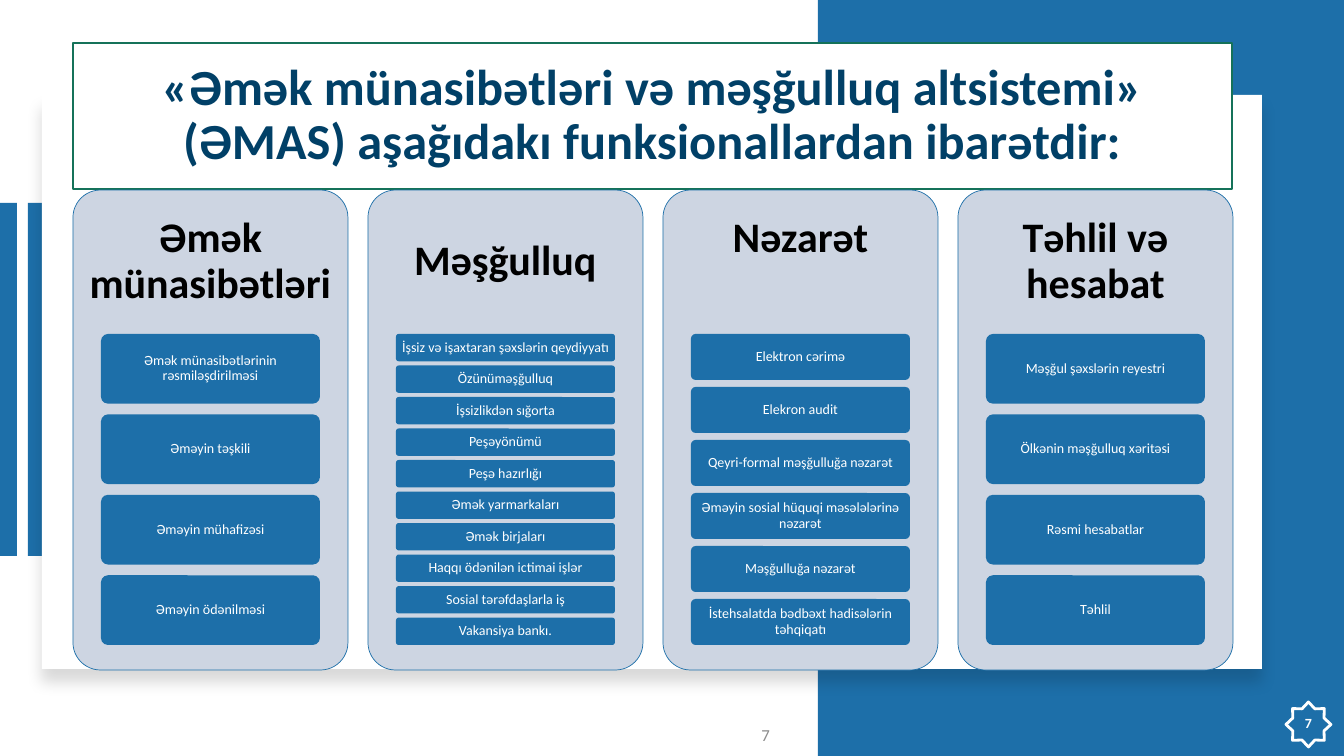
import pptx
import pptx.util
import pptx.dml.color
import pptx.enum.shapes
import pptx.enum.text
import pptx.oxml
import pptx.oxml.ns

TITLE = "«Əmək münasibətləri və məşğulluq altsistemi» (ƏMAS) aşağıdakı funksionallardan ibarətdir:"
PAGE = "7"
# heading, upward shift of the heading in px, functions
COLUMNS = [
    ("Əmək münasibətləri", 0, [
        "Əmək münasibətlərinin rəsmiləşdirilməsi", "Əməyin təşkili",
        "Əməyin mühafizəsi", "Əməyin ödənilməsi"]),
    ("Məşğulluq", 0, [
        "İşsiz və işaxtaran şəxslərin qeydiyyatı", "Özünüməşğulluq",
        "İşsizlikdən sığorta", "Peşəyönümü", "Peşə hazırlığı",
        "Əmək yarmarkaları", "Əmək birjaları", "Haqqı ödənilən ictimai işlər",
        "Sosial tərəfdaşlarla iş", "Vakansiya bankı."]),
    ("Nəzarət", 23, [
        "Elektron cərimə", "Elekron audit", "Qeyri-formal məşğulluğa nəzarət",
        "Əməyin sosial hüquqi məsələlərinə nəzarət", "Məşğulluğa nəzarət",
        "İstehsalatda bədbəxt hadisələrin təhqiqatı"]),
    ("Təhlil və hesabat", 0, [
        "Məşğul şəxslərin reyestri", "Ölkənin məşğulluq xəritəsi",
        "Rəsmi hesabatlar", "Təhlil"]),
]
COLORS = {"blue": "1D6FA9", "white": "FFFFFF", "green": "157259", "navy": "014067",
          "column": "CDD5E2", "black": "000000", "grey": "8C8C8C"}
FONT = "Calibri"

PX = 914400 / 100.8
COLUMN_X, COLUMN_Y, COLUMN_W, COLUMN_H, COLUMN_PITCH = 73, 190, 275, 480, 295
HEADING_H = 144
ITEM_INSET, ITEM_Y, ITEMS_H = 28, 334, 311
GAP_RATIO = 0.154  # gap between items relative to item height

SHAPE = pptx.enum.shapes.MSO_SHAPE
ALIGN = pptx.enum.text.PP_ALIGN


def px(n):
    return pptx.util.Emu(round(n * PX))


def rgb(name):
    return pptx.dml.color.RGBColor.from_string(COLORS[name])


def paint(sp, fill, line=None, width=1):
    if fill:
        sp.fill.solid()
        sp.fill.fore_color.rgb = rgb(fill)
    else:
        sp.fill.background()
    if line:
        sp.line.color.rgb = rgb(line)
        sp.line.width = pptx.util.Pt(width)
    else:
        sp.line.fill.background()


def add_box(slide, kind, box, fill, line=None, width=1):
    sp = slide.shapes.add_shape(kind, *map(px, box))
    sp.shadow.inherit = False
    paint(sp, fill, line, width)
    if kind == SHAPE.ROUNDED_RECTANGLE:
        sp.adjustments[0] = 0.1
    return sp


def write(sp, text, size, color, bold=False, align=ALIGN.CENTER, inset=(10, 5)):
    tf = sp.text_frame
    tf.text = text
    tf.word_wrap = True
    tf.auto_size = pptx.enum.text.MSO_AUTO_SIZE.NONE
    tf.vertical_anchor = pptx.enum.text.MSO_ANCHOR.MIDDLE
    tf.margin_left = tf.margin_right = px(inset[0])
    tf.margin_top = tf.margin_bottom = px(inset[1])
    p = tf.paragraphs[0]
    p.alignment = align
    p.line_spacing = 0.9
    font = p.runs[0].font
    font.name, font.size, font.bold = FONT, pptx.util.Pt(size), bold
    font.color.rgb = rgb(color)


def add_soft_shadow(sp):
    effects = sp._element.spPr.find(pptx.oxml.ns.qn("a:effectLst"))
    effects.append(pptx.oxml.parse_xml(
        f'<a:outerShdw {pptx.oxml.ns.nsdecls("a")} blurRad="139700" dist="127000" dir="5400000" '
        f'algn="t" rotWithShape="0"><a:srgbClr val="{COLORS["black"]}">'
        '<a:alpha val="15000"/></a:srgbClr></a:outerShdw>'))


def add_title(slide):
    sp = slide.shapes.title
    sp.left, sp.top, sp.width, sp.height = map(px, (73, 43, 1159, 146))
    sp._element.spPr.append(pptx.oxml.parse_xml(
        f'<a:prstGeom {pptx.oxml.ns.nsdecls("a")} prst="roundRect"><a:avLst/></a:prstGeom>'))
    paint(sp, "white", "green")
    write(sp, TITLE, 36, "navy", bold=True)
    slide.shapes._spTree.append(sp._element)  # in front of the panel


def add_column(slide, x, heading, shift, items):
    add_box(slide, SHAPE.ROUNDED_RECTANGLE, (x, COLUMN_Y, COLUMN_W, COLUMN_H),
            "column", "blue", 0.5)
    sp = slide.shapes.add_textbox(px(x), px(COLUMN_Y - shift), px(COLUMN_W), px(HEADING_H))
    write(sp, heading, 30, "black", bold=True, inset=(12, 12))
    item_h = ITEMS_H / (len(items) + GAP_RATIO * (len(items) - 1))
    for i, item in enumerate(items):
        y = ITEM_Y + i * item_h * (1 + GAP_RATIO)
        sp = add_box(slide, SHAPE.ROUNDED_RECTANGLE,
                     (x + ITEM_INSET, y, COLUMN_W - 2 * ITEM_INSET, item_h), "blue")
        write(sp, item, 10, "white", inset=(3, 2))


def main():
    prs = pptx.Presentation()
    prs.slide_width, prs.slide_height = px(1344), px(756)
    slide = prs.slides.add_slide(prs.slide_layouts[5])

    add_box(slide, SHAPE.RECTANGLE, (28, 203, 17, 353), "blue")
    add_box(slide, SHAPE.RECTANGLE, (818, 0, 526, 756), "blue")
    panel = add_box(slide, SHAPE.RECTANGLE, (42, 95, 1220, 574), "white")
    add_soft_shadow(panel)
    add_box(slide, SHAPE.RECTANGLE, (0, 203, 17, 353), "blue")

    number = slide.shapes.add_textbox(px(649), px(716), px(131), px(40))
    write(number, PAGE, 12, "grey", align=ALIGN.RIGHT)
    add_title(slide)
    for i, column in enumerate(COLUMNS):
        add_column(slide, COLUMN_X + i * COLUMN_PITCH, *column)

    badge = add_box(slide, SHAPE.STAR_8_POINT, (1286, 702, 45, 45), None, "white", 2)
    write(badge, PAGE, 10, "white", bold=True, inset=(0, 0))
    prs.save("out.pptx")


if __name__ == "__main__":
    main()
